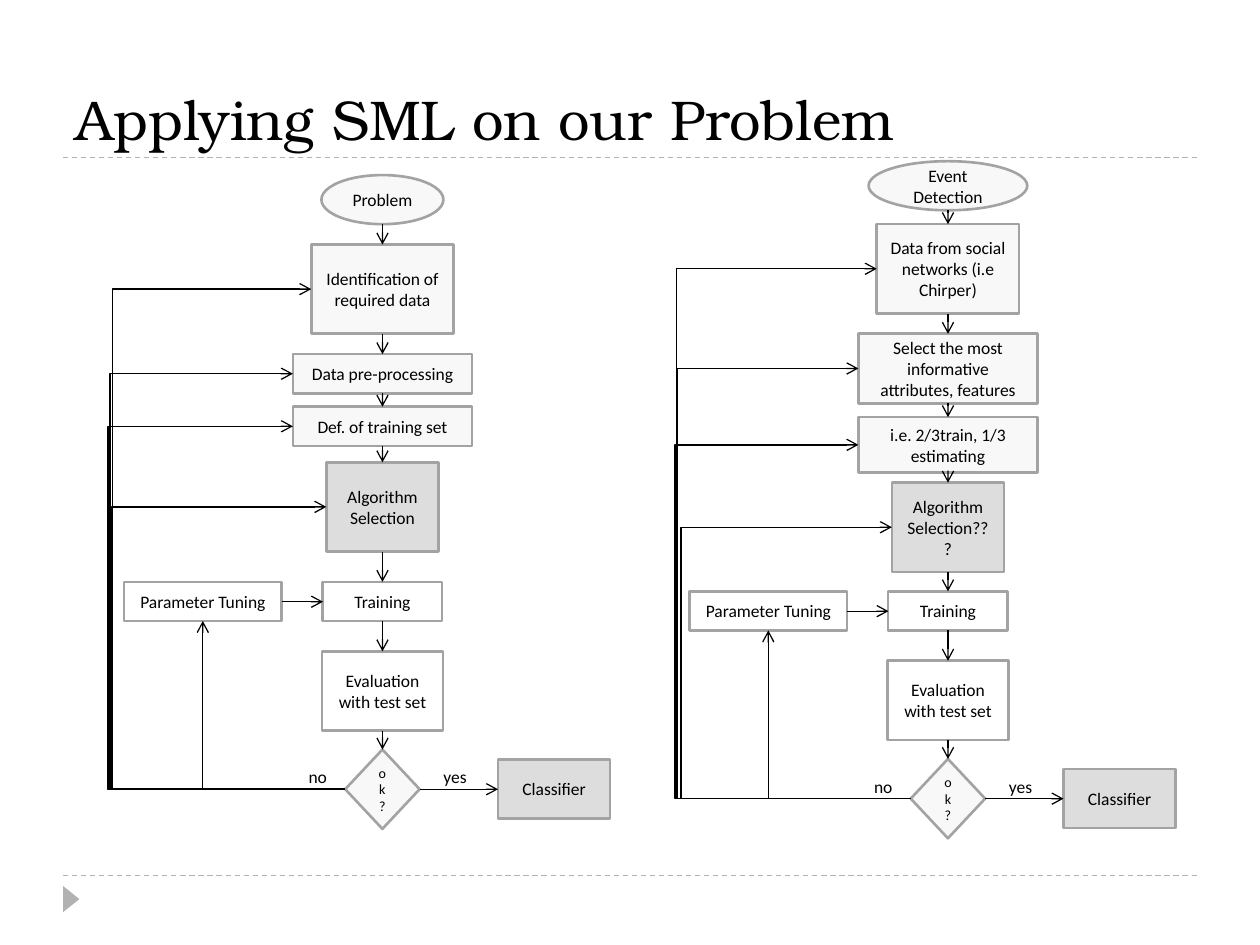
from dataclasses import dataclass

from lxml.etree import SubElement
from pptx import Presentation
from pptx.dml.color import RGBColor as Rgb
from pptx.enum.dml import MSO_LINE as Dash
from pptx.enum.shapes import MSO_CONNECTOR as Wire, MSO_SHAPE as Form
from pptx.enum.text import MSO_ANCHOR as Anchor, MSO_AUTO_SIZE as Fit, PP_ALIGN as Align
from pptx.oxml.ns import qn
from pptx.util import Cm, Pt


@dataclass(frozen=True)
class Theme:
    ink: Rgb = Rgb(0, 0, 0)
    edge: Rgb = Rgb(0xA3, 0xA3, 0xA3)
    rule: Rgb = Rgb(0xB2, 0xB2, 0xB2)
    pale: Rgb = Rgb(0xF8, 0xF8, 0xF8)
    grey: Rgb = Rgb(0xDD, 0xDD, 0xDD)
    white: Rgb = Rgb(0xFF, 0xFF, 0xFF)
    head: str = "TeX Gyre Bonum"
    body: str = "Calibri"
    big: Pt = Pt(32)
    text: Pt = Pt(10)
    small: Pt = Pt(8)


theme = Theme()
deck = Presentation()
deck.slide_width, deck.slide_height = Cm(25.4), Cm(19.05)
slide = deck.slides.add_slide(deck.slide_layouts[5])
shapes = slide.shapes


def add_box(form, text, left, top, width, height, fill, size=theme.text):
    box = shapes.add_shape(form, Cm(left), Cm(top), Cm(width), Cm(height))
    box.shadow.inherit = False
    box.fill.solid()
    box.fill.fore_color.rgb = fill
    box.line.color.rgb = theme.edge
    box.line.width = Pt(1.5)
    box.text_frame.vertical_anchor = Anchor.MIDDLE
    para = box.text_frame.paragraphs[0]
    para.text = text
    para.alignment = Align.CENTER
    para.font.name, para.font.size = theme.body, size
    para.font.color.rgb = theme.ink


def add_line(kind, start, end, color=theme.ink, arrow=True):
    line = shapes.add_connector(kind, *map(Cm, start + end))
    line.line.color.rgb = color
    line.line.width = Pt(0.75)
    props = line._element.spPr
    if arrow:
        SubElement(props.find(qn("a:ln")), qn("a:tailEnd"), type="arrow")
    SubElement(props, qn("a:effectLst"))
    return line


for y in (17.65, 3.18):
    rule = add_line(Wire.STRAIGHT, (1.27, y), (24.13, y), theme.rule, False)
    rule.line.dash_style = Dash.DASH

mark = shapes.add_shape(Form.ISOSCELES_TRIANGLE, Cm(1.17), Cm(17.96), Cm(0.53), Cm(0.33))
mark.rotation = 90
mark.shadow.inherit = False
mark.fill.solid()
mark.fill.fore_color.rgb = theme.rule
mark.line.fill.background()

title = shapes.title
title.left, title.top, title.width, title.height = Cm(1.27), Cm(0.64), Cm(22.86), Cm(2.54)
title.text_frame.auto_size = Fit.NONE
title.text_frame.vertical_anchor = Anchor.BOTTOM
para = title.text_frame.paragraphs[0]
para.text = "Applying SML on our Problem"
para.alignment = Align.LEFT
para.font.name, para.font.size = theme.head, theme.big
para.font.color.rgb = theme.ink

# text, width, top, height, fill, lane of the feedback line
flows = [
    (7.71, 11.73, [
        ("Problem", 2.46, 3.53, 0.99, theme.pale, None),
        ("Identification of required data", 2.87, 4.93, 1.8, theme.pale, 2.27),
        ("Data pre-processing", 3.61, 7.14, 0.79, theme.pale, 2.22),
        ("Def. of training set", 3.61, 8.2, 0.79, theme.pale, 2.18),
        ("Algorithm Selection", 2.26, 9.32, 1.8, theme.grey, 2.25),
    ]),
    (19.11, 11.92, [
        ("Event Detection", 3.2, 3.25, 0.99, theme.pale, None),
        ("Data from social networks (i.e Chirper)", 2.87, 4.52, 1.8, theme.pale, 13.64),
        ("Select the most informative attributes, features", 3.61, 6.73, 1.4, theme.pale, 13.66),
        ("i.e. 2/3train, 1/3 estimating", 3.61, 8.41, 1.12, theme.pale, 13.61),
        ("Algorithm Selection???", 2.26, 9.73, 1.8, theme.grey, 13.73),
    ]),
]

for mid, base, steps in flows:
    steps = steps + [
        ("Training", 2.41, base, 0.79, theme.white, None),
        ("Evaluation with test set", 2.44, base + 1.4, 1.6, theme.white, None),
        ("ok?", 1.5, base + 3.38, 1.6, theme.pale, None),
    ]
    forms = [Form.OVAL] + [Form.RECTANGLE] * 6 + [Form.DIAMOND]
    test = base + 4.18
    gate = (mid - 0.75, test)

    for form, (text, width, top, height, fill, lane) in zip(forms, steps):
        size = theme.small if form == Form.DIAMOND else theme.text
        add_box(form, text, mid - width / 2, top, width, height, fill, size)
        if lane:
            goal = (mid - width / 2, top + height / 2)
            loop = add_line(Wire.ELBOW, gate, goal)
            ratio = (gate[0] - lane) / (gate[0] - goal[0])
            guides = loop._element.spPr.prstGeom.get_or_add_avLst()
            SubElement(guides, qn("a:gd"), name="adj1", fmla=f"val {round(ratio * 100000)}")

    for above, below in zip(steps, steps[1:]):
        add_line(Wire.STRAIGHT, (mid, above[2] + above[3]), (mid, below[2]))

    tune = mid - 5.21
    add_box(Form.RECTANGLE, "Parameter Tuning", tune, base, 3.18, 0.79, theme.white)
    add_box(Form.RECTANGLE, "Classifier", mid + 2.33, test - 0.6, 2.26, 1.19, theme.grey)
    add_line(Wire.STRAIGHT, (tune + 3.18, base + 0.4), (mid - 1.2, base + 0.4))
    add_line(Wire.STRAIGHT, (mid + 0.75, test), (mid + 2.33, test))
    turn = add_line(Wire.ELBOW, gate, (tune + 1.59, base + 0.79))
    turn._element.spPr.prstGeom.set("prst", "bentConnector2")

    for text, left, width in (("yes", mid + 0.98, 1.22), ("no", mid - 1.74, 0.91)):
        note = shapes.add_textbox(Cm(left), Cm(base + 3.59), Cm(width), Cm(0.69))
        note.text_frame.word_wrap = True
        para = note.text_frame.paragraphs[0]
        para.text = text
        para.font.name, para.font.size = theme.body, theme.text
        para.font.color.rgb = theme.ink

deck.save("out.pptx")
